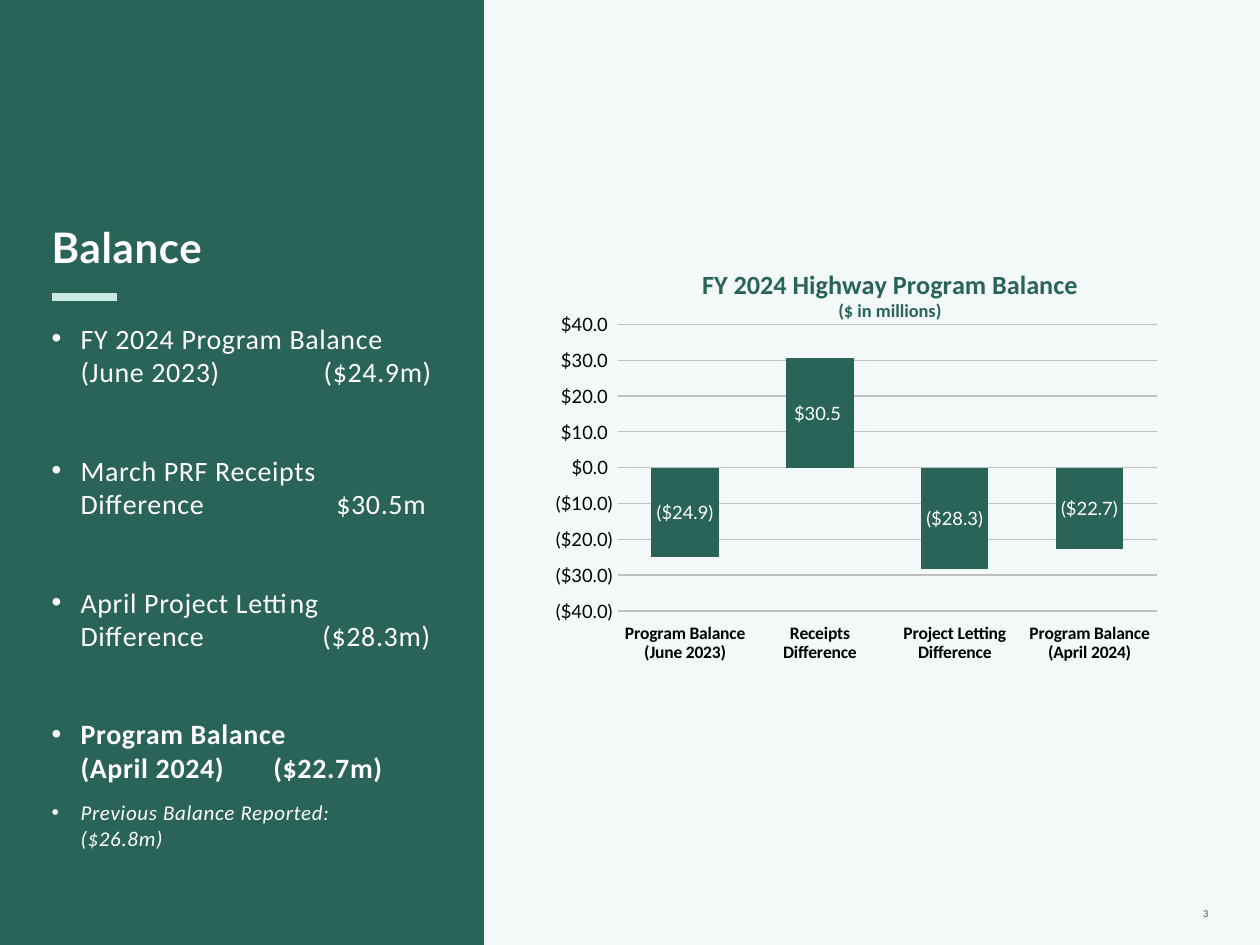
from typing import Any, NamedTuple

from lxml.etree import SubElement
from pptx import Presentation
from pptx.chart.data import CategoryChartData
from pptx.dml.color import RGBColor
from pptx.enum.chart import XL_CHART_TYPE, XL_LABEL_POSITION, XL_TICK_LABEL_POSITION, XL_TICK_MARK
from pptx.enum.shapes import MSO_CONNECTOR, MSO_SHAPE
from pptx.enum.text import MSO_ANCHOR, PP_ALIGN
from pptx.oxml import parse_xml
from pptx.oxml.ns import nsdecls, qn
from pptx.util import Inches, Pt

GREEN = RGBColor(0x2A, 0x63, 0x57)
MINT = RGBColor(0xCB, 0xE9, 0xE3)
PALE = RGBColor(0xF2, 0xF9, 0xF8)
GRAY = RGBColor(0xBF, 0xBF, 0xBF)
SLATE = RGBColor(0x4D, 0x4D, 0x4F)
WHITE = RGBColor(0xFF, 0xFF, 0xFF)
BLACK = RGBColor(0, 0, 0)
MONEY = '"$"#,##0.0_);\\("$"#,##0.0\\)'


class Item(NamedTuple):
    text: str
    tab: float = 0
    size: float = 16
    bold: bool = False
    slant: bool = False
    gap: float = 37


ITEMS = [
    Item("FY 2024 Program Balance\v(June 2023)\t($24.9m)", 2.16, gap=0),
    Item("March PRF Receipts\vDifference\t$30.5m", 2.26),
    Item("April Project Letting\vDifference\t($28.3m)", 2.15),
    Item("Program Balance\v(April 2024)\t($22.7m)", 1.76, bold=True),
    Item("Previous Balance Reported:\v($26.8m)", size=12, slant=True, gap=9),
]
BARS = {
    "Program Balance (June 2023)": -24.9,
    "Receipts Difference": 30.5,
    "Project Letting Difference": -28.3,
    "Program Balance (April 2024)": -22.7,
}


def apply(part: Any, form: dict[str, Any]) -> None:
    for key, value in form.items():
        setattr(part, key, value)


def set_font(font: Any, color: RGBColor, **form: Any) -> None:
    apply(font, form)
    font.color.rgb = color


def set_text(line: Any, text: str, space: float, color: RGBColor, **form: Any) -> None:
    line.text = text
    for run in line.runs:
        run._r.get_or_add_rPr().set("spc", str(round(space * 100)))
        set_font(run.font, color, **form)


def set_frame(frame: Any, anchor: MSO_ANCHOR, side: float = 0, edge: float = 0) -> None:
    apply(frame, {
        "word_wrap": True, "vertical_anchor": anchor,
        "margin_left": Inches(side), "margin_right": Inches(side),
        "margin_top": Inches(edge), "margin_bottom": Inches(edge),
    })


def add_item(line: Any, item: Item) -> None:
    props = line._p.get_or_add_pPr()
    props.set("marL", str(Inches(0.23)))
    props.set("indent", str(-Inches(0.23)))
    SubElement(props, qn("a:buFont")).set("typeface", "Arial")
    SubElement(props, qn("a:buChar")).set("char", "•")
    if item.tab:
        stop = SubElement(SubElement(props, qn("a:tabLst")), qn("a:tab"))
        stop.set("pos", str(Inches(item.tab)))
        stop.set("algn", "l")
    line.space_before = Pt(item.gap)
    set_text(line, item.text, 0.4, WHITE, name="Calibri", size=Pt(item.size),
             bold=item.bold, italic=item.slant)


def set_layout(node: Any, index: int, **spots: Any) -> None:
    for old in node.findall(qn("c:layout")):
        node.remove(old)
    parts = "".join(f'<c:{key} val="{value}"/>' for key, value in spots.items())
    node.insert(index, parse_xml(
        f'<c:layout {nsdecls("c")}><c:manualLayout>{parts}</c:manualLayout></c:layout>'))


def add_graph(slide: Any) -> None:
    data = CategoryChartData(number_format=MONEY)
    data.categories = list(BARS)
    data.add_series("Series 1", list(BARS.values()))
    chart = slide.shapes.add_chart(
        XL_CHART_TYPE.COLUMN_CLUSTERED, Inches(4.41), Inches(2.05),
        Inches(4.92), Inches(3.5), data).chart
    set_font(chart.font, BLACK, name="Lato", size=Pt(10))
    apply(chart, {"has_legend": False, "has_title": True})

    title = chart.chart_title
    frame = title.text_frame
    set_text(frame.paragraphs[0], "FY 2024 Highway Program Balance", 0, GREEN,
             name="Calibri", size=Pt(15), bold=True)
    set_text(frame.add_paragraph(), "($ in millions)", 0, GREEN,
             name="Calibri", size=Pt(10.5), bold=True)
    title.include_in_layout = True
    set_layout(title._element, 1, xMode="edge", yMode="edge", x=0.23, y=0.01)
    set_layout(chart._chartSpace.chart.plotArea, 0, layoutTarget="inner",
               xMode="edge", yMode="edge", x=0.1, y=0.15, w=0.87, h=0.65)

    base, scale = chart.category_axis, chart.value_axis
    for axis in (base, scale):
        apply(axis, {"major_tick_mark": XL_TICK_MARK.NONE, "minor_tick_mark": XL_TICK_MARK.NONE})
    base.tick_label_position = XL_TICK_LABEL_POSITION.LOW
    set_font(base.tick_labels.font, BLACK, name="Calibri", size=Pt(10), bold=True)
    set_font(scale.tick_labels.font, BLACK, name="Lato", size=Pt(10.5))
    apply(scale, {"minimum_scale": -40, "maximum_scale": 40, "major_unit": 10})
    apply(scale.tick_labels, {"number_format": MONEY, "number_format_is_linked": False})
    scale.format.line.fill.background()
    for line in (base.format.line, scale.major_gridlines.format.line):
        line.color.rgb = GRAY
        line.width = Pt(0.75)

    plot = chart.plots[0]
    apply(plot, {"gap_width": 100, "overlap": -24, "vary_by_categories": False,
                 "has_data_labels": True})
    labels = plot.data_labels
    apply(labels, {"show_value": True, "position": XL_LABEL_POSITION.CENTER,
                   "number_format": MONEY, "number_format_is_linked": False})
    set_font(labels.font, WHITE, name="Lato", size=Pt(10.5))
    bars = plot.series[0]
    bars.invert_if_negative = False
    bars.format.fill.solid()
    bars.format.fill.fore_color.rgb = GREEN


def add_panel(slide: Any) -> None:
    panel = slide.shapes.add_shape(MSO_SHAPE.RECTANGLE, 0, 0, Inches(3.84), Inches(7.5))
    panel.shadow.inherit = False
    panel.fill.solid()
    panel.fill.fore_color.rgb = GREEN
    panel.line.fill.background()
    slide.shapes._spTree.insert(2, panel._element)


def add_title(slide: Any) -> None:
    title = slide.shapes.title
    apply(title, {"left": Inches(0.41), "top": Inches(1.76),
                  "width": Inches(3.04), "height": Inches(0.4)})
    set_frame(title.text_frame, MSO_ANCHOR.TOP)
    line = title.text_frame.paragraphs[0]
    line.alignment = PP_ALIGN.LEFT
    set_text(line, "Balance", 0.4, WHITE, name="Lato", size=Pt(24), bold=True)


def add_list(slide: Any) -> None:
    box = slide.shapes.add_textbox(Inches(0.41), Inches(2.55), Inches(3.04), Inches(4.24))
    frame = box.text_frame
    set_frame(frame, MSO_ANCHOR.TOP)
    for index, item in enumerate(ITEMS):
        add_item(frame.add_paragraph() if index else frame.paragraphs[0], item)


def add_rule(slide: Any) -> None:
    rule = slide.shapes.add_connector(
        MSO_CONNECTOR.STRAIGHT, Inches(0.41), Inches(2.36), Inches(0.93), Inches(2.36))
    rule.line.color.rgb = MINT
    rule.line.width = Pt(4.5)
    SubElement(rule._element.spPr, qn("a:effectLst"))


def add_number(slide: Any) -> None:
    box = slide.shapes.add_textbox(Inches(8.62), Inches(6.95), Inches(0.97), Inches(0.4))
    set_frame(box.text_frame, MSO_ANCHOR.BOTTOM, edge=0.05)
    line = box.text_frame.paragraphs[0]
    line.alignment = PP_ALIGN.RIGHT
    set_text(line, "3", 1.1, SLATE, name="Calibri", size=Pt(6))


def main() -> None:
    deck = Presentation()
    apply(deck, {"slide_width": Inches(10), "slide_height": Inches(7.5)})
    slide = deck.slides.add_slide(deck.slide_layouts[5])
    slide.background.fill.solid()
    slide.background.fill.fore_color.rgb = PALE
    for draw in (add_panel, add_title, add_list, add_rule, add_graph, add_number):
        draw(slide)
    deck.save("out.pptx")


if __name__ == "__main__":
    main()
